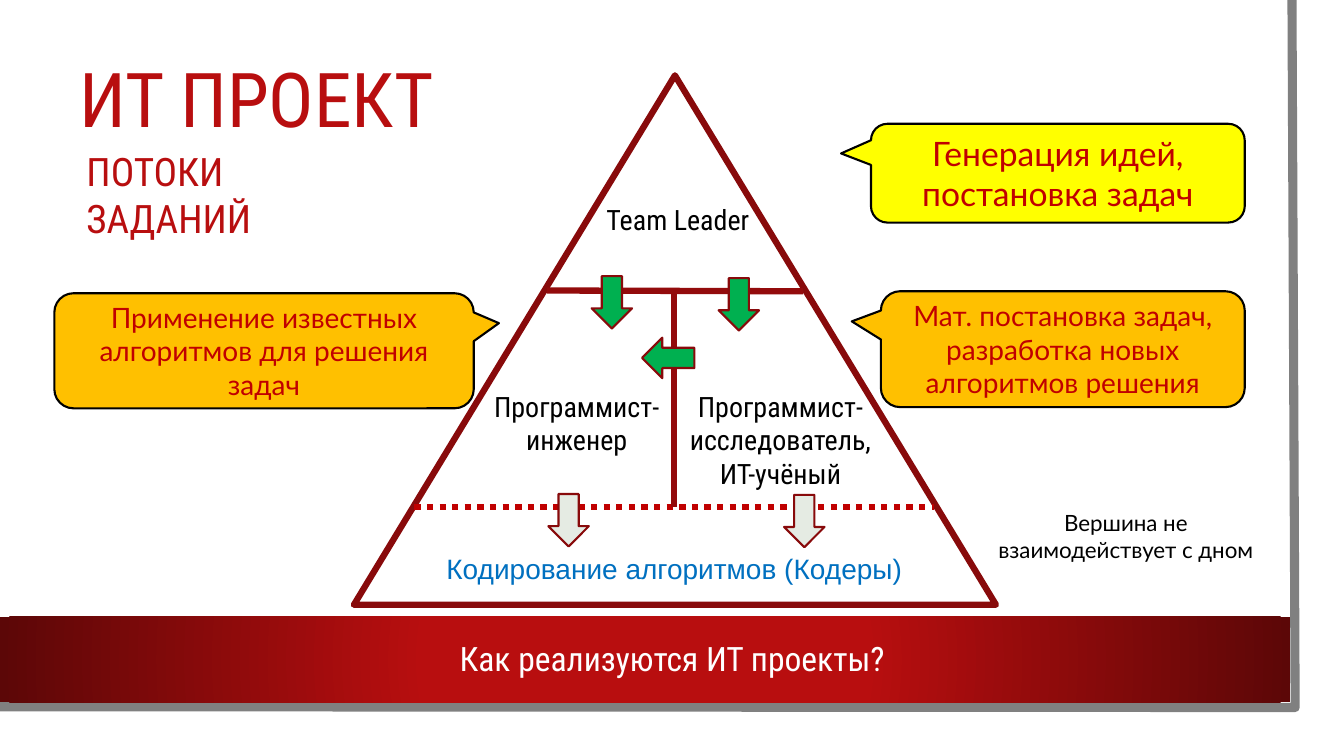
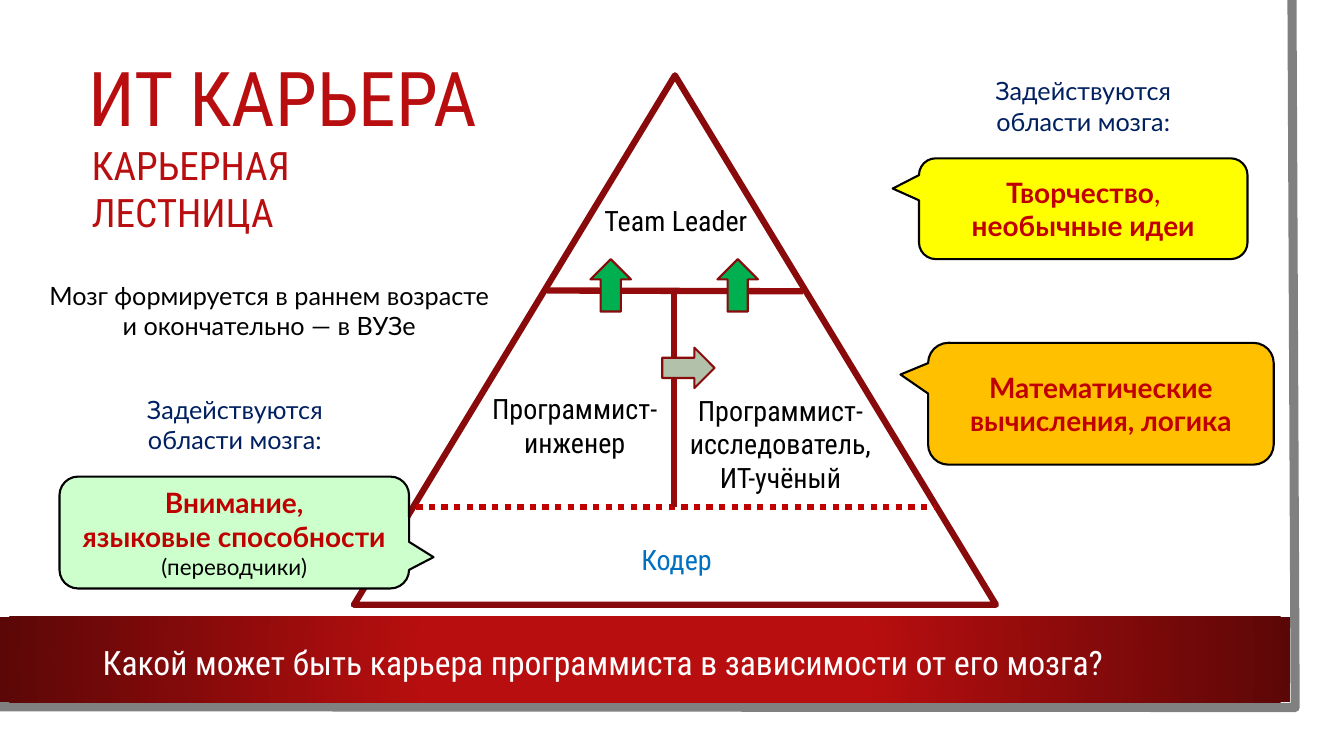
"""Build two slides on the IT project pyramid and the careers within it."""
from dataclasses import dataclass

from lxml.etree import SubElement
from pptx import Presentation
from pptx.dml.color import RGBColor
from pptx.enum.dml import MSO_LINE
from pptx.enum.shapes import MSO_CONNECTOR, MSO_SHAPE
from pptx.enum.text import MSO_ANCHOR, PP_ALIGN
from pptx.oxml.ns import qn
from pptx.util import Cm, Pt


@dataclass(frozen=True)
class Theme:
    red: str = "B80E0F"
    dark_red: str = "5C0707"
    outline: str = "880A0B"
    divider: str = "930B0C"
    accent: str = "C00000"
    frame: str = "808080"
    black: str = "000000"
    white: str = "FFFFFF"
    blue: str = "0070C0"
    navy: str = "002060"
    yellow: str = "FFFF00"
    orange: str = "FFC000"
    mint: str = "CCFFCC"
    green: str = "00B050"
    pale: str = "E5EBE3"
    sage: str = "B2C2AA"
    heading_font: str = "Roboto Condensed"
    body_font: str = "Lato"
    plain_font: str = "Arial"
    title: int = 54
    subtitle: int = 28
    large: int = 24
    body: int = 20
    note: int = 18
    small: int = 16
    thick: float = 4.5
    thin: float = 1.5
    edge: float = 6.5


T = Theme()


def rgb(value):
    return RGBColor.from_string(value)


class Deck:
    def __init__(self):
        self.prs = Presentation()
        self.prs.slide_width, self.prs.slide_height = Cm(33.87), Cm(19.05)
        self.s = None

    def new_slide(self):
        self.s = self.prs.slides.add_slide(self.prs.slide_layouts[6])
        self.frame()
        self.band()

    def style(self, sp, fill=None, line=None, width=T.thin):
        sp.shadow.inherit = False
        if fill:
            sp.fill.solid()
            sp.fill.fore_color.rgb = rgb(fill)
        else:
            sp.fill.background()
        if line:
            sp.line.color.rgb = rgb(line)
            sp.line.width = Pt(width)
        else:
            sp.line.fill.background()

    def shape(self, kind, box, **look):
        sp = self.s.shapes.add_shape(kind, *map(Cm, box))
        self.style(sp, **look)
        return sp

    def frame(self):
        builder = self.s.shapes.build_freeform(Cm(32.56), 0)
        corners = [(Cm(32.64), Cm(17.83)), (Cm(-0.08), Cm(17.81))]
        builder.add_line_segments(corners, close=False)
        self.style(builder.convert_to_shape(), line=T.frame, width=T.edge)

    def band(self):
        sp = self.shape(MSO_SHAPE.RECTANGLE, (0, 15.54, 32.51, 2.16))
        sp.fill.gradient()
        stops = zip(sp.fill.gradient_stops, (0.34, 1), (T.red, T.dark_red))
        for stop, position, color in stops:
            stop.position = position
            stop.color.rgb = rgb(color)
        grad = sp._element.spPr.find(qn("a:gradFill"))
        grad.remove(grad.find(qn("a:lin")))
        radial = SubElement(grad, qn("a:path"), path="circle")
        SubElement(radial, qn("a:fillToRect"),
                   dict.fromkeys("ltrb", "50000"))

    def set_text(self, sp, text, size, color, font=T.body_font, bold=False,
                 align=PP_ALIGN.CENTER, anchor=MSO_ANCHOR.MIDDLE):
        tf = sp.text_frame
        tf.word_wrap = True
        tf.vertical_anchor = anchor
        p = tf.paragraphs[0]
        p.alignment = align
        p.font.size, p.font.name, p.font.bold = Pt(size), font, bold
        p.font.color.rgb = rgb(color)
        for part in [text] if isinstance(text, str) else text:
            words, own = (part, {}) if isinstance(part, str) else part
            for i, line in enumerate(words.split("\n")):
                if i:
                    p.add_line_break()
                if line:
                    r = p.add_run()
                    r.text = line
                    self.override(r, **own)
        return p

    def override(self, r, size=None, color=None, bold=None):
        if size:
            r.font.size = Pt(size)
        if color:
            r.font.color.rgb = rgb(color)
        if bold is not None:
            r.font.bold = bold

    def text(self, box, text, size, color, **look):
        sp = self.s.shapes.add_textbox(*map(Cm, box))
        return self.set_text(sp, text, size, color, **look)

    def label(self, box, text, color=T.black, size=T.body,
              font=T.heading_font, align=PP_ALIGN.CENTER):
        self.text(box, text, size, color, font=font, align=align,
                  anchor=MSO_ANCHOR.TOP)

    def title(self, x, y, text):
        p = self.text((x, y, 28.88, 3.2), text, T.title, T.red,
                      font=T.heading_font, align=PP_ALIGN.LEFT)
        p.line_spacing = 0.9

    def subtitle(self, x, y, text):
        self.label((x, y, 9, 2.6), text, T.red, T.subtitle,
                   align=PP_ALIGN.LEFT)

    def footer(self, box, text, align=PP_ALIGN.CENTER):
        self.label(box, text, T.white, T.large, align=align)

    def line(self, x1, y1, x2, y2, color, dash=None):
        ln = self.s.shapes.add_connector(
            MSO_CONNECTOR.STRAIGHT, *map(Cm, (x1, y1, x2, y2)))
        ln.line.color.rgb = rgb(color)
        ln.line.width = Pt(T.thick)
        if dash:
            ln.line.dash_style = dash
        SubElement(ln._element.spPr, qn("a:effectLst"))

    def pyramid(self, leader, engineer, researcher, dotted_left):
        self.shape(MSO_SHAPE.ISOSCELES_TRIANGLE, (8.92, 1.9, 16.18, 13.34),
                   line=T.outline, width=T.thick)
        self.line(13.79, 7.32, 20.24, 7.34, T.divider)
        self.line(dotted_left, 12.78, dotted_left + 13.11, 12.78, T.accent,
                  MSO_LINE.ROUND_DOT)
        self.line(16.99, 7.32, 16.99, 12.78, T.divider)
        self.label((*leader, 4.55, 1.12), "Team Leader")
        self.label((*engineer, 5.05, 1.96), "Программист-\nинженер")
        self.label((*researcher, 5.46, 2.82),
                   "Программист-\nисследователь,\nИТ-учёный")

    def callout(self, box, text, fill, tip, size=T.body, bold=False):
        sp = self.shape(MSO_SHAPE.ROUNDED_RECTANGULAR_CALLOUT, box,
                        fill=fill, line=T.black)
        for i, value in enumerate(tip):
            sp.adjustments[i] = value
        self.set_text(sp, text, size, T.accent, bold=bold)

    def arrow(self, x, y, fill=T.green, turn=0):
        sp = self.shape(MSO_SHAPE.DOWN_ARROW, (x, y, 1.02, 1.32),
                        fill=fill, line=T.outline)
        sp.rotation = turn


def project_slide(deck):
    deck.new_slide()
    deck.title(1.75, 0.99, "ИТ ПРОЕКТ")
    deck.subtitle(1.93, 3.58, "ПОТОКИ\nЗАДАНИЙ")
    deck.pyramid((14.81, 4.98), (12.01, 9.68), (16.94, 9.68), 10.44)
    deck.label((10.44, 13.77, 13.11, 1.12), "Кодирование алгоритмов (Кодеры)",
               T.blue, font=T.plain_font)
    deck.callout((21.95, 3.12, 9.42, 2.49), "Генерация идей, постановка задач",
                 T.yellow, (-0.58, -0.2), T.large)
    deck.callout((22.2, 7.34, 9.17, 2.92),
                 "Мат. постановка задач, разработка новых алгоритмов решения",
                 T.orange, (-0.58, -0.24))
    deck.callout((1.37, 7.39, 10.57, 2.9),
                 "Применение известных алгоритмов для решения задач",
                 T.orange, (0.56, -0.24))
    deck.text((24.77, 12.27, 7.21, 2.49),
              "Вершина не\nвзаимодействует с дном", T.small, T.black)
    deck.arrow(14.91, 6.96)
    deck.arrow(18.11, 7.01)
    deck.arrow(16.33, 8.36, turn=90)
    deck.arrow(13.82, 12.45, T.pale)
    deck.arrow(19.76, 12.47, T.pale)
    deck.footer((11.02, 15.95, 11.84, 1.27), "Как реализуются ИТ проекты?")


def career_slide(deck):
    deck.new_slide()
    deck.title(1.98, 0.97, "ИТ КАРЬЕРА")
    deck.subtitle(2.06, 3.43, "КАРЬЕРНАЯ\nЛЕСТНИЦА")
    deck.pyramid((14.76, 5), (11.96, 9.75), (16.94, 9.78), 10.49)
    deck.label((12.07, 13.54, 9.96, 1.12), "Кодер", T.blue)
    deck.callout((23.16, 3.99, 8.28, 2.54),
                 ["Творчество", (",\n", {"bold": False}), "необычные идеи"],
                 T.yellow, (-0.58, -0.2), bold=True)
    deck.callout((23.39, 8.64, 8.71, 3.07),
                 "Математические вычисления, логика",
                 T.orange, (-0.58, -0.24), bold=True)
    deck.callout((1.5, 12.01, 8.81, 2.82),
                 ["Внимание,\nязыковые способности\n",
                  ("(переводчики)",
                   {"size": T.small, "color": T.black, "bold": False})],
                 T.mint, (0.57, 0.22), bold=True)
    for x, y in ((23.16, 1.5), (1.78, 9.53)):
        deck.text((x, y, 8.28, 2.34), "Задействуются\nобласти мозга:",
                  T.note, T.navy)
    deck.text((0.84, 6.65, 11.89, 2.34),
              "Мозг формируется в раннем возрасте\nи окончательно — в ВУЗе",
              T.note, T.black)
    for x in (14.88, 18.08):
        deck.arrow(x, 6.53, turn=180)
    deck.arrow(16.84, 8.61, T.sage, turn=270)
    deck.footer((2.34, 16.05, 26.97, 1.27),
                "Какой может быть карьера программиста "
                "в зависимости от его мозга?", PP_ALIGN.LEFT)


def main():
    deck = Deck()
    project_slide(deck)
    career_slide(deck)
    deck.prs.save("out.pptx")


if __name__ == "__main__":
    main()
